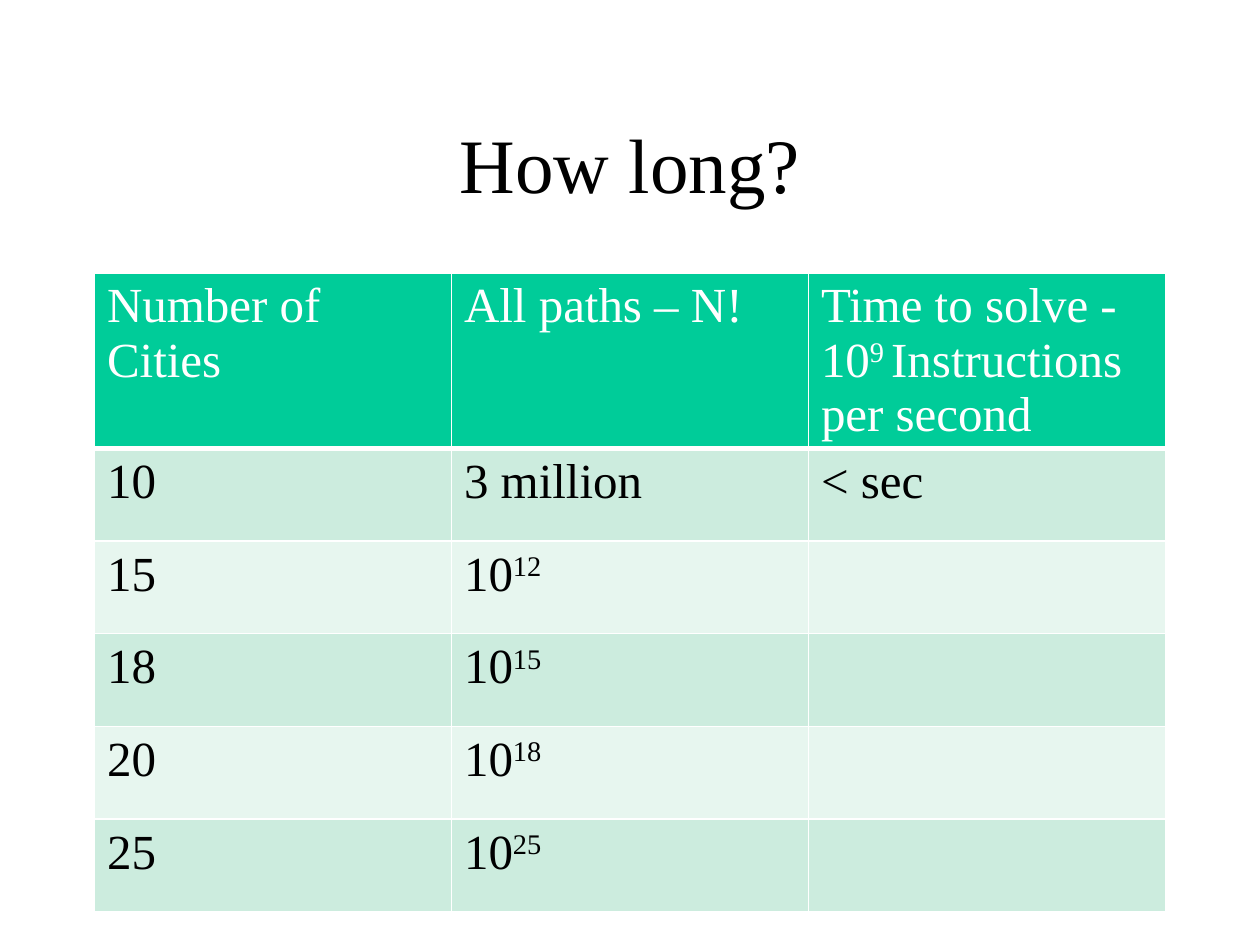
from dataclasses import dataclass

import lxml.etree
import pptx
import pptx.dml.color
import pptx.enum.text
import pptx.oxml.ns
import pptx.util

Pt = pptx.util.Pt
FONT = "Times New Roman"
COLORS = {
    "text": "000000",
    "header_text": "FFFFFF",
    "header": "00CC99",
    "odd_row": "CCECDE",
    "even_row": "E7F6EF",
    "border": "FFFFFF",
}


@dataclass
class Span:
    text: str
    superscript: bool = False


Paragraphs = list[list[Span]]


def plain(text: str) -> Paragraphs:
    return [[Span(text)]]


def power(exponent: int) -> Paragraphs:
    return [[Span("10"), Span(str(exponent), True)]]


HEADER: list[Paragraphs] = [
    plain("Number of Cities"),
    plain("All paths – N!"),
    [
        [Span("Time to solve -")],
        [Span("10"), Span("9 ", True), Span("Instructions per second")],
    ],
]
BODY: list[list[Paragraphs]] = [
    [plain("10"), plain("3 million"), plain("< sec")],
    [plain("15"), power(12), []],
    [plain("18"), power(15), []],
    [plain("20"), power(18), []],
    [plain("25"), power(25), []],
]


def rgb(name: str) -> pptx.dml.color.RGBColor:
    return pptx.dml.color.RGBColor.from_string(COLORS[name])


def add_run(paragraph, span: Span, size: float, color: str) -> None:
    run = paragraph.add_run()
    run.text = span.text
    run.font.name = FONT
    run.font.size = Pt(size)
    run.font.color.rgb = rgb(color)
    if span.superscript:
        run.font._element.set("baseline", "30000")


def set_borders(cell, bottom_width: float) -> None:
    properties = cell._tc.get_or_add_tcPr()
    qn = pptx.oxml.ns.qn
    widths = {"lnL": 1, "lnR": 1, "lnT": 1, "lnB": bottom_width}
    for position, (side, width) in enumerate(widths.items()):
        line = lxml.etree.Element(qn(f"a:{side}"), w=str(Pt(width)))
        fill = lxml.etree.SubElement(line, qn("a:solidFill"))
        lxml.etree.SubElement(fill, qn("a:srgbClr"), val=COLORS["border"])
        properties.insert(position, line)


def fill_cell(cell, paragraphs: Paragraphs, fill: str, color: str, bottom_width: float) -> None:
    cell.fill.solid()
    cell.fill.fore_color.rgb = rgb(fill)
    set_borders(cell, bottom_width)
    for index, spans in enumerate(paragraphs):
        frame = cell.text_frame
        paragraph = frame.add_paragraph() if index else frame.paragraphs[0]
        for span in spans:
            add_run(paragraph, span, 28, color)


def add_title(slide, text: str) -> None:
    title = slide.shapes.title
    title.left, title.top, title.width, title.height = Pt(54), Pt(48), Pt(612), Pt(90)
    title.text_frame.vertical_anchor = pptx.enum.text.MSO_ANCHOR.MIDDLE
    paragraph = title.text_frame.paragraphs[0]
    paragraph.alignment = pptx.enum.text.PP_ALIGN.CENTER
    add_run(paragraph, Span(text), 44, "text")


def add_path_table(slide) -> None:
    rows = [HEADER, *BODY]
    row_height = 53
    table = slide.shapes.add_table(
        len(rows), len(HEADER), Pt(54), Pt(156), Pt(612), Pt(row_height * len(rows))
    ).table
    for row_index, row in enumerate(rows):
        table.rows[row_index].height = Pt(row_height)
        if row_index == 0:
            fill, color, bottom_width = "header", "header_text", 3
        else:
            fill = "odd_row" if row_index % 2 else "even_row"
            color, bottom_width = "text", 1
        for column_index, paragraphs in enumerate(row):
            cell = table.cell(row_index, column_index)
            fill_cell(cell, paragraphs, fill, color, bottom_width)


def main() -> None:
    presentation = pptx.Presentation()
    presentation.slide_width, presentation.slide_height = Pt(720), Pt(540)
    # Title-only layout
    slide = presentation.slides.add_slide(presentation.slide_layouts[5])
    add_title(slide, "How long?")
    # Growth of the number of paths
    add_path_table(slide)
    presentation.save("out.pptx")


if __name__ == "__main__":
    main()
